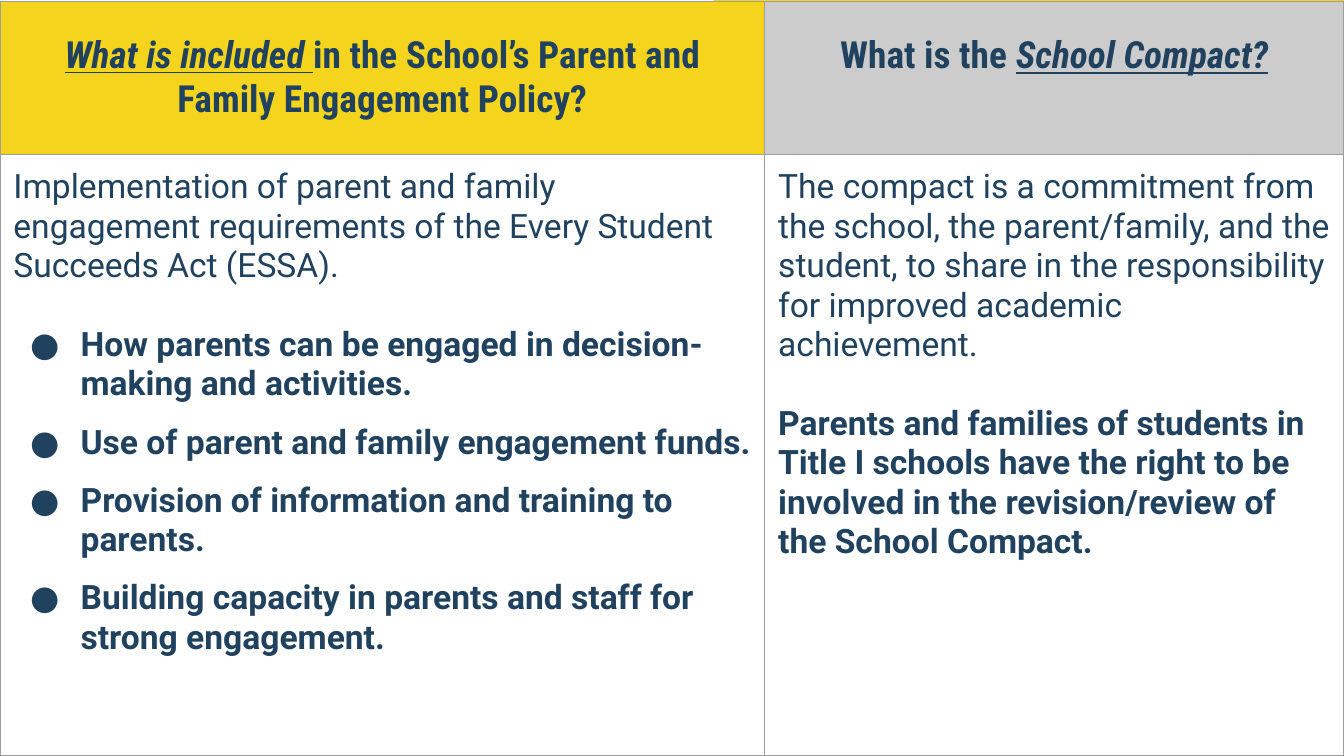
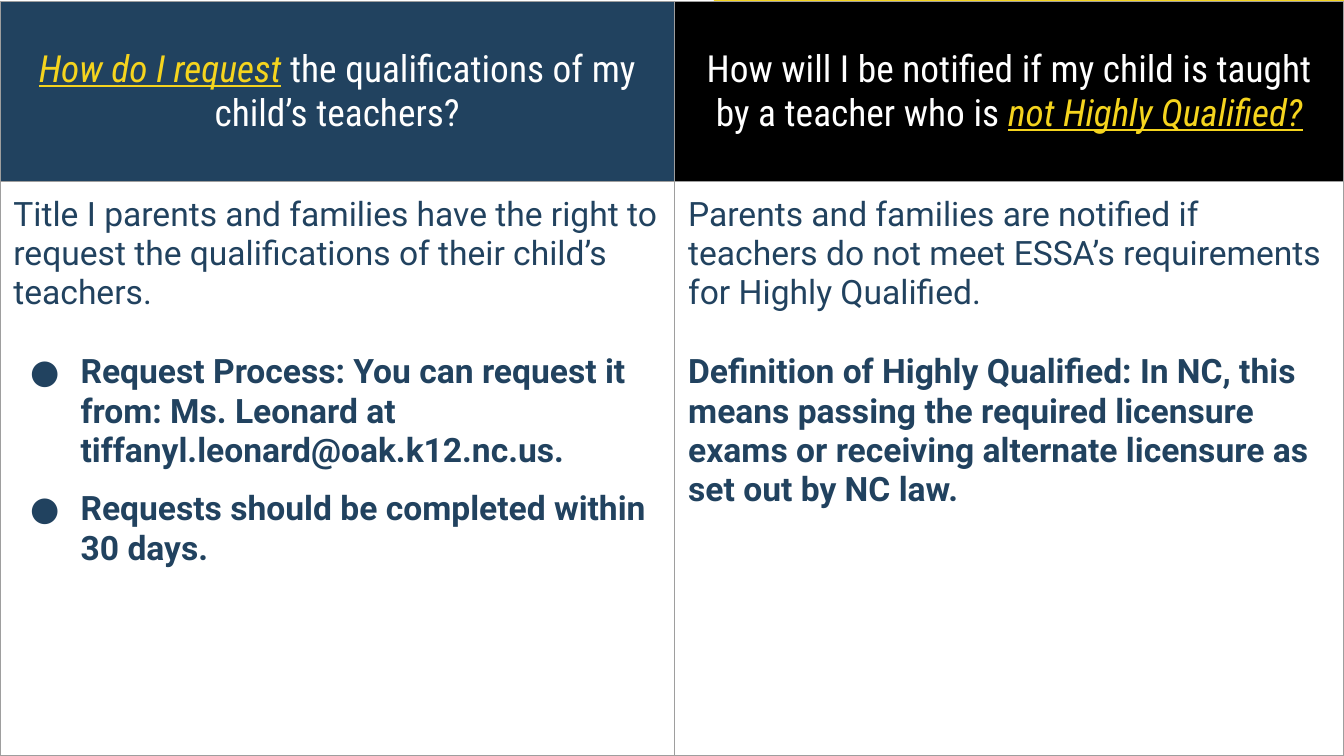
from lxml import etree
from pptx import Presentation
from pptx.dml.color import RGBColor
from pptx.enum.shapes import MSO_SHAPE
from pptx.enum.text import MSO_ANCHOR, PP_ALIGN
from pptx.oxml.ns import qn
from pptx.util import Pt

RECTANGLE = MSO_SHAPE.RECTANGLE
MIDDLE, TOP = MSO_ANCHOR.MIDDLE, MSO_ANCHOR.TOP
CENTER, LEFT = PP_ALIGN.CENTER, PP_ALIGN.LEFT

NAVY, YELLOW, GRAY = "21425F", "F5D41E", "CCCCCC"
WHITE, BLACK, BORDER = "FFFFFF", "000000", "9E9E9E"
HEADING_FONT, BODY_FONT = "Roboto Condensed", "Roboto"
HEADING_SIZE, BODY_SIZE = 20, 18
SLIDE_WIDTH, SLIDE_HEIGHT = 720, 405
TABLE_TOP = 0.75
INSET = 7.2
HEADING_LINE, BODY_LINE = 23.4, 21.1
BULLET_GAP = 10
BAND_LEFT = 382.5

# Headings hold (text, emphasized) runs; each body has an intro and bold points.
POLICY_SLIDE = {
    "column_widths": (409.7, 310.3),
    "heading_height": 82,
    "bold_headings": True,
    "columns": [
        {
            "fill": YELLOW, "color": NAVY, "emphasis": NAVY,
            "heading": [
                ("What is included ", True),
                ("in the School’s Parent and Family Engagement Policy?", False),
            ],
            "intro": "Implementation of parent and family engagement requirements "
                     "of the Every Student Succeeds Act (ESSA).",
            "bulleted": True,
            "points": [
                "How parents can be engaged in decision-making and activities.",
                "Use of parent and family engagement funds.",
                "Provision of information and training to parents.",
                "Building capacity in parents and staff for strong engagement.",
            ],
        },
        {
            "fill": GRAY, "color": NAVY, "emphasis": NAVY,
            "heading": [("What is the ", False), ("School Compact?", True)],
            "heading_lift": HEADING_LINE,
            "intro": "The compact is a commitment from the school, the "
                     "parent/family, and the student, to share in the "
                     "responsibility for improved academic achievement.",
            "bulleted": False,
            "points": [
                "Parents and families of students in Title I schools have the "
                "right to be involved in the revision/review of the School Compact.",
            ],
        },
    ],
}

TEACHER_SLIDE = {
    "column_widths": (361.5, 358.5),
    "heading_height": 96.5,
    "bold_headings": False,
    "columns": [
        {
            "fill": NAVY, "color": WHITE, "emphasis": YELLOW,
            "heading": [
                ("How do I request", True),
                (" the qualifications of my child’s teachers?", False),
            ],
            "intro": "Title I parents and families have the right to request the "
                     "qualifications of their child’s teachers.",
            "bulleted": True,
            "points": [
                "Request Process: You can request it from: Ms. Leonard at "
                "tiffanyl.leonard@oak.k12.nc.us.",
                "Requests should be completed within 30 days.",
            ],
        },
        {
            "fill": BLACK, "color": WHITE, "emphasis": YELLOW,
            "heading": [
                ("How will I be notified if my child is taught by a teacher who is ",
                 False),
                ("not Highly Qualified?", True),
            ],
            "intro": "Parents and families are notified if teachers do not meet "
                     "ESSA’s requirements for Highly Qualified.",
            "bulleted": False,
            "points": [
                "Definition of Highly Qualified: In NC, this means passing the "
                "required licensure exams or receiving alternate licensure as "
                "set out by NC law.",
            ],
        },
    ],
}


def rgb(value):
    return RGBColor.from_string(value)


def format_run(run, font_name, size, color, bold=False):
    run.font.name = font_name
    run.font.size = Pt(size)
    run.font.color.rgb = rgb(color)
    run.font.bold = bold


def add_bullet(paragraph):
    properties = paragraph._p.get_or_add_pPr()
    properties.set("marL", str(Pt(36)))
    properties.set("indent", str(-Pt(27)))
    bullet_color = etree.SubElement(properties, qn("a:buClr"))
    etree.SubElement(bullet_color, qn("a:srgbClr"), val=NAVY)
    etree.SubElement(properties, qn("a:buFont"), typeface=BODY_FONT)
    etree.SubElement(properties, qn("a:buChar"), char="●")


def style_cell(cell, fill, anchor):
    properties = cell._tc.get_or_add_tcPr()
    for side in ("a:lnL", "a:lnR", "a:lnT", "a:lnB"):
        line = etree.SubElement(properties, qn(side), w=str(Pt(0.75)))
        line_fill = etree.SubElement(line, qn("a:solidFill"))
        etree.SubElement(line_fill, qn("a:srgbClr"), val=BORDER)
    cell.fill.solid()
    cell.fill.fore_color.rgb = rgb(fill)
    cell.vertical_anchor = anchor
    cell.margin_left = cell.margin_right = Pt(INSET)
    cell.margin_top = cell.margin_bottom = Pt(INSET)


def fill_heading(cell, column, bold):
    style_cell(cell, column["fill"], MIDDLE)
    cell.margin_bottom = Pt(INSET + column.get("heading_lift", 0))
    paragraph = cell.text_frame.paragraphs[0]
    paragraph.alignment = CENTER
    for text, emphasized in column["heading"]:
        run = paragraph.add_run()
        run.text = text
        color = column["emphasis"] if emphasized else column["color"]
        format_run(run, HEADING_FONT, HEADING_SIZE, color, bold)
        run.font.italic = run.font.underline = emphasized


def fill_body(cell, column):
    style_cell(cell, WHITE, TOP)
    cell.text_frame.text = "\n".join([column["intro"], *column["points"]])
    for index, paragraph in enumerate(cell.text_frame.paragraphs):
        paragraph.alignment = LEFT
        format_run(paragraph.runs[0], BODY_FONT, BODY_SIZE, NAVY, bold=index > 0)
        if index == 0:
            paragraph.space_after = Pt(BODY_LINE)
            continue
        if index > 1:
            paragraph.space_before = Pt(BULLET_GAP)
        if column["bulleted"]:
            add_bullet(paragraph)


def add_yellow_band(slide):
    band = slide.shapes.add_shape(
        RECTANGLE, Pt(BAND_LEFT), Pt(0),
        Pt(SLIDE_WIDTH - BAND_LEFT), Pt(SLIDE_HEIGHT))
    band.shadow.inherit = False
    band.fill.solid()
    band.fill.fore_color.rgb = rgb(YELLOW)
    band.line.fill.background()


def add_question_table(slide, content, left, top, width, height):
    table = slide.shapes.add_table(
        2, 2, Pt(left), Pt(top), Pt(width), Pt(height)).table
    table.rows[0].height = Pt(content["heading_height"])
    table.rows[1].height = Pt(height - content["heading_height"])
    for index, column in enumerate(content["columns"]):
        table.columns[index].width = Pt(content["column_widths"][index])
        fill_heading(table.cell(0, index), column, content["bold_headings"])
        fill_body(table.cell(1, index), column)


def add_question_slide(presentation, content):
    slide = presentation.slides.add_slide(presentation.slide_layouts[6])
    add_yellow_band(slide)
    add_question_table(slide, content, 0, TABLE_TOP,
                       SLIDE_WIDTH, SLIDE_HEIGHT - TABLE_TOP)


def main():
    presentation = Presentation()
    presentation.slide_width = Pt(SLIDE_WIDTH)
    presentation.slide_height = Pt(SLIDE_HEIGHT)
    for content in (POLICY_SLIDE, TEACHER_SLIDE):
        add_question_slide(presentation, content)
    presentation.save("out.pptx")


if __name__ == "__main__":
    main()
